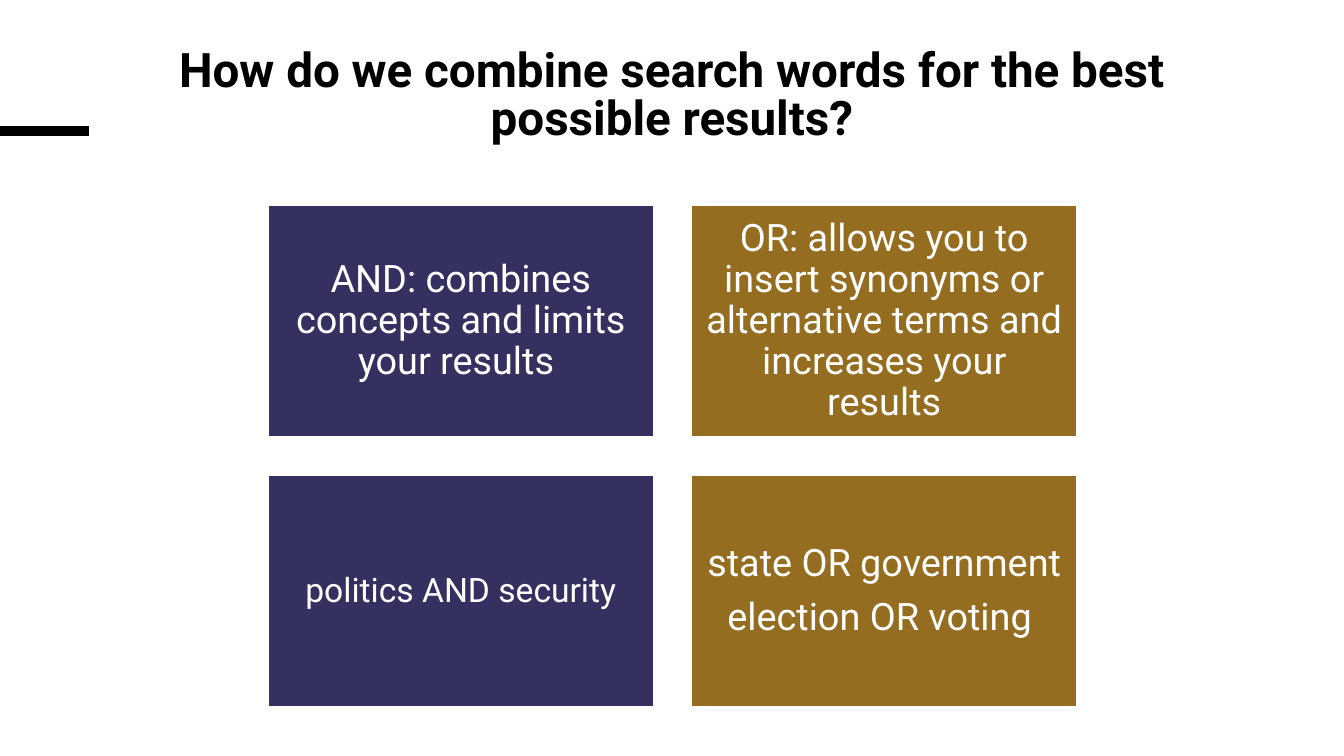
from dataclasses import dataclass

from lxml.etree import SubElement
from pptx import Presentation
from pptx.dml.color import RGBColor
from pptx.enum.shapes import MSO_CONNECTOR, MSO_SHAPE
from pptx.enum.text import MSO_ANCHOR, PP_ALIGN
from pptx.oxml.ns import qn
from pptx.slide import Slide
from pptx.text.text import TextFrame
from pptx.util import Inches, Pt

FONT = "Roboto"
BLACK, WHITE, NAVY, GOLD = "000000", "FFFFFF", "343161", "946D20"
GRID_LEFT, GRID_TOP = 2.66, 2.04
CARD_WIDTH, CARD_HEIGHT = 3.82, 2.29
COLUMN_STEP, ROW_STEP = 4.2, 2.68


@dataclass(frozen=True)
class Card:
    column: int
    row: int
    fill: str
    lines: tuple[str, ...]
    size: float = 27


CARDS = (
    Card(0, 0, NAVY, ("AND: combines concepts and limits your results ",)),
    Card(1, 0, GOLD, ("OR: allows you to insert synonyms or alternative terms and increases your results",)),
    Card(0, 1, NAVY, ("politics AND security",), size=24),
    Card(1, 1, GOLD, ("state OR government", "election OR voting ")),
)


def rgb(value: str) -> RGBColor:
    return RGBColor.from_string(value)


def write(frame: TextFrame, *lines: str, size: float, color: str, bold: bool = False,
          line_spacing: float = 0.9, space_after: float = 0,
          inset_x: float = 0.1, inset_y: float = 0.1) -> None:
    frame.word_wrap = True
    frame.vertical_anchor = MSO_ANCHOR.MIDDLE
    frame.margin_left = frame.margin_right = Inches(inset_x)
    frame.margin_top = frame.margin_bottom = Inches(inset_y)
    for index, line in enumerate(lines):
        paragraph = frame.add_paragraph() if index else frame.paragraphs[0]
        paragraph.alignment = PP_ALIGN.CENTER
        paragraph.line_spacing = line_spacing
        paragraph.space_after = Pt(space_after)
        run = paragraph.add_run()
        run.text = line
        run.font.name = FONT
        run.font.size = Pt(size)
        run.font.bold = bold
        run.font.color.rgb = rgb(color)


def draw_title(slide: Slide) -> None:
    title = slide.shapes.add_textbox(Inches(0.92), Inches(0.37), Inches(11.49), Inches(1.18))
    write(title.text_frame, "How do we combine search words for the best possible results?",
          size=34, color=BLACK, bold=True, line_spacing=0.85, inset_y=0.05)


def draw_accent(slide: Slide) -> None:
    accent = slide.shapes.add_connector(
        MSO_CONNECTOR.STRAIGHT, 0, Inches(1.3), Inches(0.88), Inches(1.3))
    accent.line.color.rgb = rgb(BLACK)
    accent.line.width = Pt(6.75)
    SubElement(accent.element.spPr, qn("a:effectLst"))


def draw_card(slide: Slide, card: Card) -> None:
    box = slide.shapes.add_shape(
        MSO_SHAPE.RECTANGLE,
        Inches(GRID_LEFT + card.column * COLUMN_STEP), Inches(GRID_TOP + card.row * ROW_STEP),
        Inches(CARD_WIDTH), Inches(CARD_HEIGHT))
    box.shadow.inherit = False
    box.fill.solid()
    box.fill.fore_color.rgb = rgb(card.fill)
    box.line.color.rgb = rgb(WHITE)
    box.line.width = Pt(1)
    inset = round(card.size / 240, 2)
    write(box.text_frame, *card.lines, size=card.size, color=WHITE,
          space_after=0.35 * card.size, inset_x=inset, inset_y=inset)


def main() -> None:
    deck = Presentation()
    deck.slide_width, deck.slide_height = Inches(13.33), Inches(7.5)
    slide = deck.slides.add_slide(deck.slide_layouts[6])
    draw_accent(slide)
    draw_title(slide)
    for card in CARDS:
        draw_card(slide, card)
    deck.save("out.pptx")


if __name__ == "__main__":
    main()
